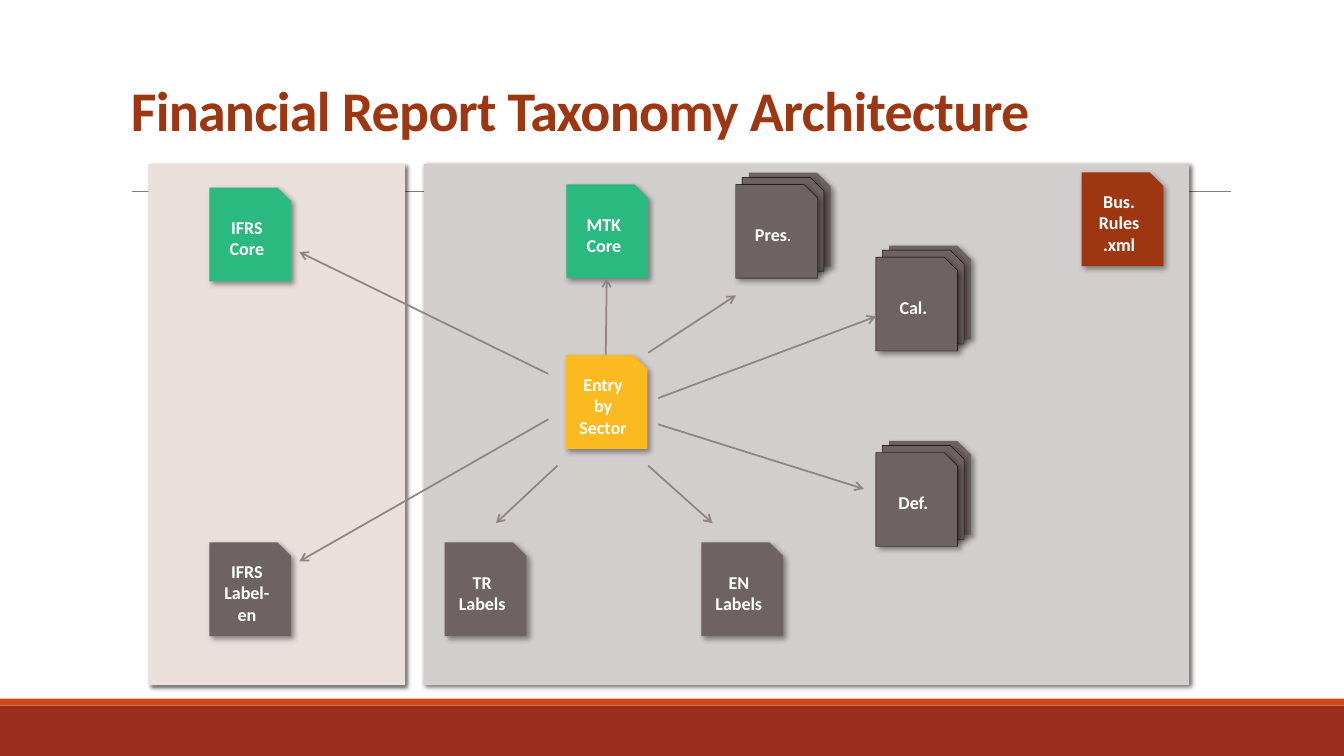
"""Build the Financial Report Taxonomy Architecture slide."""
from dataclasses import dataclass

from lxml.etree import SubElement
from pptx import Presentation
from pptx.dml.color import RGBColor
from pptx.enum.shapes import MSO_CONNECTOR, MSO_SHAPE
from pptx.enum.text import MSO_ANCHOR, PP_ALIGN
from pptx.oxml.ns import qn
from pptx.shapes.autoshape import Shape
from pptx.shapes.connector import Connector
from pptx.slide import Slide
from pptx.text.text import TextFrame
from pptx.util import Pt

WHITE = RGBColor(0xFF, 0xFF, 0xFF)
BLACK = RGBColor(0x00, 0x00, 0x00)
RULE_GRAY = RGBColor(0x80, 0x80, 0x80)
FOOTER_RED = RGBColor(0x9B, 0x2D, 0x1F)
FOOTER_ORANGE = RGBColor(0xD3, 0x48, 0x17)
RUST = RGBColor(0x9E, 0x36, 0x11)
LOCAL_GRAY = RGBColor(0xD3, 0xCE, 0xCE)
IFRS_PINK = RGBColor(0xEB, 0xDF, 0xDB)
TAUPE = RGBColor(0x6E, 0x62, 0x63)
GREEN = RGBColor(0x2A, 0xB9, 0x7E)
YELLOW = RGBColor(0xFB, 0xBA, 0x20)
ARROW_TAUPE = RGBColor(0x91, 0x84, 0x85)

FONT = "Calibri"
CARD_WIDTH, CARD_HEIGHT = 58.4, 67
STACK_OFFSETS = ((9.4, -8.3), (4.5, -5))
LABEL_ROW = 387.4


@dataclass(frozen=True)
class Shadow:
    opacity: int
    blur: float
    distance: float


PANEL_SHADOW = Shadow(60, 3, 2)
CARD_SHADOW = Shadow(40, 4, 3)


@dataclass(frozen=True)
class Block:
    left: float
    top: float
    width: float
    height: float
    fill: RGBColor
    shadow: Shadow | None = None


@dataclass(frozen=True)
class Card:
    lines: tuple[str, ...]
    left: float
    top: float
    fill: RGBColor = TAUPE
    stacked: bool = False
    light_ending: str = ""


@dataclass(frozen=True)
class Arrow:
    start: tuple[float, float]
    end: tuple[float, float]


FOOTER = (
    Block(0, 504, 960, 36, FOOTER_RED),
    Block(0, 499, 960, 5, FOOTER_ORANGE),
)
PANELS = (
    Block(303, 117.3, 546.5, 372.2, LOCAL_GRAY, PANEL_SHADOW),
    Block(106, 117.3, 183.5, 372.2, IFRS_PINK, PANEL_SHADOW),
)
CARDS = (
    Card(("IFRS", "Core"), 149.6, 134, GREEN),
    Card(("MTK", "Core"), 404.6, 131.7, GREEN),
    Card(("Entry by Sector",), 404, 253.7, YELLOW),
    Card(("Bus. Rules", ".xml"), 772.6, 123.2, RUST),
    Card(("IFRS", "Label-en"), 149.6, LABEL_ROW),
    Card(("TR", "Labels"), 317.7, LABEL_ROW),
    Card(("EN", "Labels"), 501, LABEL_ROW),
    Card(("Pres",), 525.6, 131.7, stacked=True, light_ending="."),
    Card(("Cal.",), 625.7, 183.7, stacked=True),
    Card(("Def.",), 625.7, 323.2, stacked=True),
)
ARROWS = (
    Arrow((391.7, 267.1), (213.8, 180)),
    Arrow((391.7, 299.5), (213.8, 401)),
    Arrow((463, 252), (525.6, 211)),
    Arrow((470.2, 284.4), (625.7, 226.1)),
    Arrow((470.2, 303.1), (617, 349.2)),
    Arrow((463, 332.6), (509, 373.7)),
    Arrow((398.2, 332.6), (354.2, 373.7)),
    Arrow((432.7, 253.4), (433.4, 198.7)),
)


def write(frame: TextFrame, lines: tuple[str, ...], *, size: float, color: RGBColor,
          align: PP_ALIGN, anchor: MSO_ANCHOR, line_spacing: float = 1,
          tracking: int = 0, light_ending: str = "") -> None:
    frame.word_wrap = True
    frame.vertical_anchor = anchor
    for index, line in enumerate(lines):
        paragraph = frame.paragraphs[0] if index == 0 else frame.add_paragraph()
        paragraph.alignment = align
        paragraph.line_spacing = line_spacing
        pieces = [(line, True)]
        if light_ending and index == len(lines) - 1:
            pieces.append((light_ending, False))
        for words, bold in pieces:
            run = paragraph.add_run()
            run.text = words
            run.font.name = FONT
            run.font.size = Pt(size)
            run.font.bold = bold
            run.font.color.rgb = color
            if tracking:
                run.font._element.set("spc", str(tracking))


def cast_shadow(shape: Shape, shadow: Shadow) -> None:
    effects = shape._element.spPr.find(qn("a:effectLst"))
    outer = SubElement(effects, qn("a:outerShdw"), blurRad=str(Pt(shadow.blur)),
                       dist=str(Pt(shadow.distance)), dir="2700000",
                       algn="tl", rotWithShape="0")
    tint = SubElement(outer, qn("a:srgbClr"), val=str(BLACK))
    SubElement(tint, qn("a:alpha"), val=str(shadow.opacity * 1000))


def draw_block(slide: Slide, block: Block, preset: MSO_SHAPE = MSO_SHAPE.RECTANGLE,
               outlined: bool = False) -> Shape:
    shape = slide.shapes.add_shape(preset, Pt(block.left), Pt(block.top),
                                   Pt(block.width), Pt(block.height))
    shape.fill.solid()
    shape.fill.fore_color.rgb = block.fill
    if outlined:
        shape.line.color.rgb = BLACK
        shape.line.width = Pt(0.25)
    else:
        shape.line.fill.background()
    shape.shadow.inherit = False
    if block.shadow:
        cast_shadow(shape, block.shadow)
    return shape


def draw_card(slide: Slide, card: Card) -> None:
    offsets = (*STACK_OFFSETS, (0, 0)) if card.stacked else ((0, 0),)
    for layer, (across, down) in enumerate(offsets):
        sheet = Block(card.left + across, card.top + down, CARD_WIDTH, CARD_HEIGHT,
                      card.fill, CARD_SHADOW)
        front = draw_block(slide, sheet, MSO_SHAPE.SNIP_1_RECTANGLE, outlined=layer > 0)
    write(front.text_frame, card.lines, size=12.9, color=WHITE, align=PP_ALIGN.CENTER,
          anchor=MSO_ANCHOR.MIDDLE, light_ending=card.light_ending)


def draw_line(slide: Slide, start: tuple[float, float], end: tuple[float, float],
              color: RGBColor, width: float) -> Connector:
    line = slide.shapes.add_connector(MSO_CONNECTOR.STRAIGHT, Pt(start[0]), Pt(start[1]),
                                      Pt(end[0]), Pt(end[1]))
    line.line.color.rgb = color
    line.line.width = Pt(width)
    SubElement(line._element.spPr, qn("a:effectLst"))
    return line


def draw_arrow(slide: Slide, arrow: Arrow) -> None:
    line = draw_line(slide, arrow.start, arrow.end, ARROW_TAUPE, 1.25)
    SubElement(line.line._get_or_add_ln(), qn("a:tailEnd"), type="arrow")


def main() -> None:
    deck = Presentation()
    deck.slide_width, deck.slide_height = Pt(960), Pt(540)
    slide = deck.slides.add_slide(deck.slide_layouts[6])
    for band in FOOTER:
        draw_block(slide, band)
    draw_line(slide, (94.3, 136.6), (879, 136.6), RULE_GRAY, 0.5)
    title = slide.shapes.add_textbox(Pt(86.4), Pt(22.3), Pt(792), Pt(83.5))
    write(title.text_frame, ("Financial Report Taxonomy Architecture",), size=40,
          color=RUST, align=PP_ALIGN.LEFT, anchor=MSO_ANCHOR.BOTTOM,
          line_spacing=0.85, tracking=-50)
    for panel in PANELS:
        draw_block(slide, panel)
    for card in CARDS:
        draw_card(slide, card)
    for arrow in ARROWS:
        draw_arrow(slide, arrow)
    deck.save("out.pptx")


if __name__ == "__main__":
    main()
